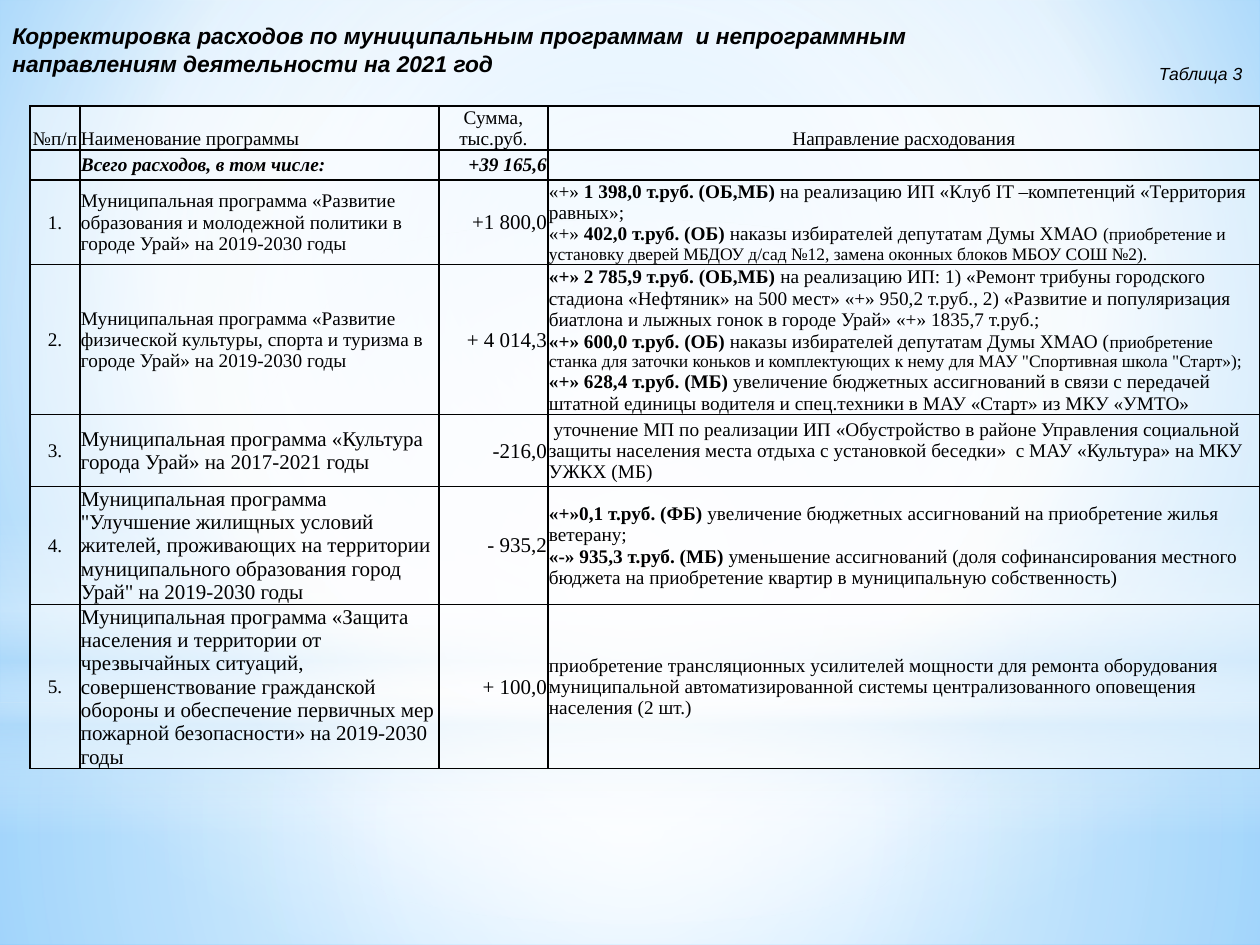
from dataclasses import dataclass

from lxml import etree
from pptx import Presentation
from pptx.dml.color import RGBColor
from pptx.enum.shapes import MSO_SHAPE
from pptx.enum.text import MSO_ANCHOR, MSO_AUTO_SIZE, PP_ALIGN
from pptx.oxml import parse_xml
from pptx.oxml.ns import nsdecls, qn
from pptx.util import Emu, Pt

EMU_PER_PX = 914400 / 126
COLORS = {"ink": "000000", "white": "FFFFFF", "mist": "B4DCFA", "sky": "9ED5FF", "blue": "5BB9FF"}
SERIF, SANS = "Times New Roman", "Arial"
LEFT, CENTER, RIGHT = PP_ALIGN.LEFT, PP_ALIGN.CENTER, PP_ALIGN.RIGHT


@dataclass(frozen=True)
class Gradient:
    stops: tuple
    focus: tuple = (50, 50, 50, 50)
    angle: int | None = None


@dataclass(frozen=True)
class Panel:
    kind: MSO_SHAPE
    y: int
    h: int
    gradient: Gradient


@dataclass(frozen=True)
class Run:
    text: str
    size: int = 11
    bold: bool = False
    italic: bool = False
    font: str = SERIF


@dataclass(frozen=True)
class Program:
    number: str
    name: str
    amount: str
    purpose: tuple
    name_size: int = 12
    anchor: MSO_ANCHOR = MSO_ANCHOR.MIDDLE


BACKGROUND = Gradient(((0, "sky", 100), (60, "white", 100), (100, "blue", 100)), (20, 10, 20, 60))
PANELS = [
    Panel(MSO_SHAPE.RECTANGLE, 703, 242, Gradient(((0, "white", 91), (37, "white", 76), (100, "mist", 79)))),
    Panel(MSO_SHAPE.RECTANGLE, 0, 703, Gradient(((0, "white", 89), (48, "white", 62), (100, "mist", 79)))),
    Panel(MSO_SHAPE.RECTANGLE, 519, 315, Gradient(
        ((0, "white", 0), (29, "white", 30), (45, "mist", 40), (55, "white", 26), (65, "mist", 60),
         (100, "white", 0)), angle=90)),
    Panel(MSO_SHAPE.OVAL, 220, 703, Gradient(((0, "white", 100), (56, "white", 0)))),
]

COLUMNS = [50, 359, 109, 712]
ROWS = [43, 30, 84, 150, 72, 118, 164]
HEADERS = [("№п/п", CENTER), ("Наименование программы", LEFT), ("Сумма, тыс.руб.", CENTER),
           ("Направление расходования", CENTER)]
TOTALS = [("", LEFT), ("Всего расходов, в том числе:", LEFT), ("+39 165,6", RIGHT), ("", LEFT)]
PROGRAMS = [
    Program("1.", "Муниципальная программа «Развитие образования и молодежной политики в городе Урай» на 2019-2030 годы",
            "+1 800,0", (
                (Run("«+» "), Run("1 398,0 т.руб. (ОБ,МБ) ", bold=True),
                 Run("на реализацию ИП «Клуб IT –компетенций «Территория равных»;")),
                (Run("«+» "), Run("402,0 т.руб. (ОБ)", bold=True),
                 Run(" наказы избирателей депутатам Думы ХМАО "),
                 Run("(приобретение и установку дверей МБДОУ д/сад №12, замена оконных блоков МБОУ СОШ №2).", 10)),
            ), 11, MSO_ANCHOR.BOTTOM),
    Program("2.", "Муниципальная программа «Развитие физической культуры, спорта и туризма в городе Урай» на 2019-2030 годы",
            "+ 4 014,3", (
                (Run("«+» 2 785,9 т.руб. (ОБ,МБ) ", bold=True),
                 Run("на реализацию ИП: 1) «Ремонт трибуны городского стадиона «Нефтяник» на 500 мест» "
                     "«+» 950,2 т.руб., 2) «Развитие и популяризация биатлона и лыжных гонок в городе Урай» "
                     "«+» 1835,7 т.руб.;")),
                (Run("«+» 600,0 т.руб. (ОБ)", bold=True), Run(" наказы избирателей депутатам Думы ХМАО ("),
                 Run("приобретение станка для заточки коньков и комплектующих к нему для МАУ "
                     '"Спортивная школа "Старт»);', 10)),
                (Run("«+» 628,4 т.руб. (МБ) ", bold=True),
                 Run("увеличение бюджетных ассигнований в связи с передачей штатной единицы водителя и "
                     "спец.техники в МАУ «Старт» из МКУ «УМТО»")),
            ), 11, MSO_ANCHOR.BOTTOM),
    Program("3.", "Муниципальная программа «Культура города Урай» на 2017-2021 годы", "-216,0", (
        (Run(" уточнение МП по реализации ИП «Обустройство в районе Управления социальной защиты населения "
             "места отдыха с установкой беседки»  с МАУ «Культура» на МКУ УЖКХ (МБ)"),),
    )),
    Program("4.", 'Муниципальная программа "Улучшение жилищных условий жителей, проживающих на территории '
            'муниципального образования город Урай" на 2019-2030 годы', "- 935,2", (
                (Run("«+»0,1 т.руб. (ФБ) ", bold=True),
                 Run("увеличение бюджетных ассигнований на приобретение жилья ветерану;")),
                (Run("«-» 935,3 т.руб. (МБ) ", bold=True),
                 Run("уменьшение ассигнований (доля софинансирования местного бюджета на приобретение квартир "
                     "в муниципальную собственность)")),
            )),
    Program("5.", "Муниципальная программа «Защита населения и территории от чрезвычайных ситуаций, "
            "совершенствование гражданской обороны и обеспечение первичных мер пожарной безопасности» "
            "на 2019-2030 годы", "+ 100,0", (
                (Run("приобретение трансляционных усилителей мощности для ремонта оборудования муниципальной "
                     "автоматизированной системы централизованного оповещения населения (2 шт.)"),),
            )),
]


def px(n: int) -> Emu:
    return Emu(round(n * EMU_PER_PX))


def apply_gradient(fill, props, gradient: Gradient) -> None:
    fill.gradient()
    stops = "".join(
        f'<a:gs pos="{pos * 1000}"><a:srgbClr val="{COLORS[color]}"><a:alpha val="{alpha * 1000}"/></a:srgbClr></a:gs>'
        for pos, color, alpha in gradient.stops)
    if gradient.angle is None:
        l, t, r, b = (n * 1000 for n in gradient.focus)
        shade = f'<a:path path="circle"><a:fillToRect l="{l}" t="{t}" r="{r}" b="{b}"/></a:path>'
    else:
        shade = f'<a:lin ang="{gradient.angle * 60000}" scaled="0"/>'
    old = props.find(qn("a:gradFill"))
    props.replace(old, parse_xml(
        f'<a:gradFill {nsdecls("a")} rotWithShape="1"><a:gsLst>{stops}</a:gsLst>{shade}</a:gradFill>'))


def add_panel(s, panel: Panel) -> None:
    sp = s.shapes.add_shape(panel.kind, 0, px(panel.y), px(1260), px(panel.h))
    sp.shadow.inherit = False
    sp.line.fill.background()
    apply_gradient(sp.fill, sp._element.spPr, panel.gradient)


def write(tf, paragraphs: tuple, align: PP_ALIGN) -> None:
    for i, runs in enumerate(paragraphs):
        p = tf.add_paragraph() if i else tf.paragraphs[0]
        p.alignment = align
        for run in runs:
            r = p.add_run()
            r.text = run.text
            r.font.name, r.font.size = run.font, Pt(run.size)
            r.font.bold, r.font.italic = run.bold, run.italic
            r.font.color.rgb = RGBColor.from_string(COLORS["ink"])


def style_cell(cell, anchor: MSO_ANCHOR) -> None:
    cell.margin_left = cell.margin_right = cell.margin_top = px(1)
    cell.margin_bottom = 0
    cell.vertical_anchor = anchor
    cell.fill.solid()
    cell.fill.fore_color.rgb = RGBColor.from_string(COLORS["white"])
    tc_pr = cell._tc.get_or_add_tcPr()
    etree.SubElement(tc_pr.find(".//" + qn("a:srgbClr")), qn("a:alpha"), val="47000")
    for i, side in enumerate(("lnL", "lnR", "lnT", "lnB")):
        tc_pr.insert(i, parse_xml(
            f'<a:{side} {nsdecls("a")} w="12700"><a:solidFill><a:srgbClr val="{COLORS["ink"]}"/>'
            f'</a:solidFill></a:{side}>'))


def fill_cell(cell, paragraphs: tuple, align: PP_ALIGN, anchor: MSO_ANCHOR = MSO_ANCHOR.MIDDLE) -> None:
    style_cell(cell, anchor)
    if paragraphs:
        write(cell.text_frame, paragraphs, align)
    else:
        cell.text_frame.paragraphs[0]._p.get_or_add_endParaRPr().set("sz", "1100")


def add_program_table(s) -> None:
    frame = s.shapes.add_table(len(ROWS), len(COLUMNS), px(30), px(106), px(sum(COLUMNS)), px(sum(ROWS)))
    table = frame.table
    table.first_row = table.horz_banding = False
    for column, width in zip(table.columns, COLUMNS):
        column.width = px(width)
    for row, height in zip(table.rows, ROWS):
        row.height = px(height)
    for i, (text, align) in enumerate(HEADERS):
        fill_cell(table.cell(0, i), ((Run(text),),), align, MSO_ANCHOR.BOTTOM)
    for i, (text, align) in enumerate(TOTALS):
        fill_cell(table.cell(1, i), ((Run(text, bold=True, italic=True),),) if text else (), align)
    for i, program in enumerate(PROGRAMS, 2):
        fill_cell(table.cell(i, 0), ((Run(program.number),),), CENTER)
        fill_cell(table.cell(i, 1), ((Run(program.name, program.name_size),),), LEFT)
        fill_cell(table.cell(i, 2), ((Run(program.amount, 12),),), RIGHT)
        fill_cell(table.cell(i, 3), program.purpose, LEFT, program.anchor)


def add_label(s, box: tuple, runs: tuple, align: PP_ALIGN, wrap: bool) -> None:
    tf = s.shapes.add_textbox(*map(px, box)).text_frame
    tf.word_wrap = wrap
    tf.auto_size = MSO_AUTO_SIZE.SHAPE_TO_FIT_TEXT
    write(tf, (runs,), align)


def main() -> None:
    prs = Presentation()
    prs.slide_width, prs.slide_height = px(1260), px(945)
    s = prs.slides.add_slide(prs.slide_layouts[6])
    fill = s.background.fill
    fill.solid()
    apply_gradient(fill, s._element.cSld.bg.bgPr, BACKGROUND)
    for panel in PANELS:
        add_panel(s, panel)
    add_program_table(s)
    add_label(s, (0, 16, 1081, 68), (
        Run("Корректировка расходов по муниципальным программам  и непрограммным  направлениям деятельности "
            "на 2021 год", 13, True, True, SANS),), LEFT, True)
    add_label(s, (1144, 55, 116, 37), (
        Run("Таблица 3", 10, italic=True, font=SANS), Run(" ", 11, italic=True, font=SANS)), RIGHT, False)
    prs.save("out.pptx")


if __name__ == "__main__":
    main()
